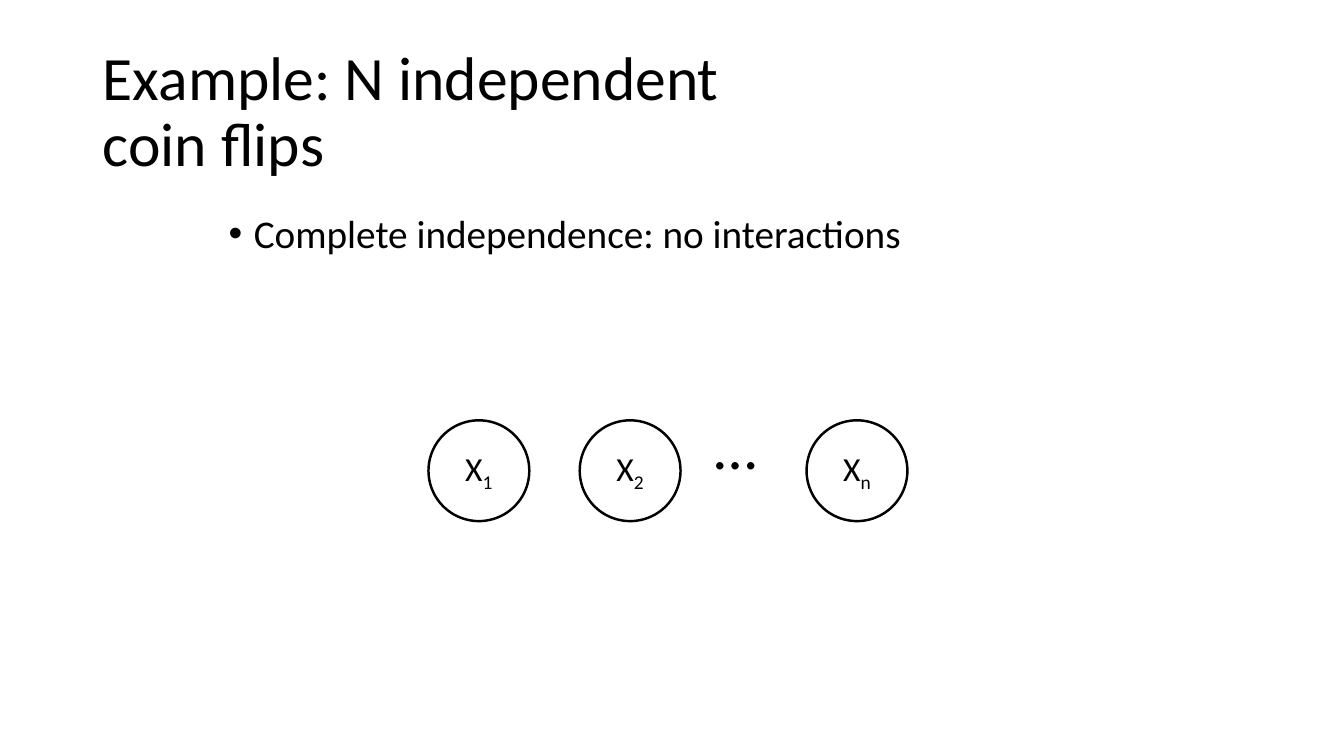
from pptx import Presentation
from pptx.dml.color import RGBColor
from pptx.enum import shapes, text
from pptx.oxml.ns import qn
from pptx.util import Inches, Pt
from lxml import etree

INK = {"black": "000000"}
black = RGBColor.from_string(INK["black"])

deck = Presentation()
deck.slide_width, deck.slide_height = Inches(13.33), Inches(7.5)
slide = deck.slides.add_slide(deck.slide_layouts[5])


def style(para, size):
    para.font.size = Pt(size)
    para.font.name = "Calibri"
    para.font.color.rgb = black


def add_text(left, top, width, height, words):
    box = slide.shapes.add_textbox(Inches(left), Inches(top), Inches(width), Inches(height))
    box.text_frame.word_wrap = True
    para = box.text_frame.paragraphs[0]
    para.text = words
    return para


# Title
title = slide.shapes.title
title.left, title.top = Inches(0.92), Inches(0.4)
title.width, title.height = Inches(11.5), Inches(1.45)
title.text_frame.text = "Example: N independent \vcoin flips"
title.text_frame.vertical_anchor = text.MSO_ANCHOR.MIDDLE
head = title.text_frame.paragraphs[0]
head.alignment = text.PP_ALIGN.LEFT
head.line_spacing = 0.9
style(head, 44)

# Bullet
point = add_text(2.17, 2.08, 9, 4.62, "Complete independence: no interactions")
point.line_spacing = 0.9
props = point._p.get_or_add_pPr()
props.set("marL", str(Inches(0.25)))
props.set("indent", str(-Inches(0.25)))
etree.SubElement(props, qn("a:buFont"), typeface="Arial")
etree.SubElement(props, qn("a:buChar"), char="•")
style(point, 28)

# Coin variables
for left, index in [(4.25, "1"), (5.75, "2"), (8, "n")]:
    coin = slide.shapes.add_shape(shapes.MSO_SHAPE.OVAL, Inches(left), Inches(4.17),
                                  Inches(1), Inches(1))
    coin.shadow.inherit = False
    coin.fill.background()
    coin.line.color.rgb = black
    coin.line.width = Pt(1.75)
    coin.text_frame.vertical_anchor = text.MSO_ANCHOR.MIDDLE
    label = coin.text_frame.paragraphs[0]
    label.alignment = text.PP_ALIGN.CENTER
    label.add_run().text = "X"
    sub = label.add_run()
    sub.text = index
    sub.font._element.set("baseline", "-25000")
    style(label, 24)

# Ellipsis between coins
style(add_text(6.99, 4, 1.4, 0.84, "…"), 44)

deck.save("out.pptx")
